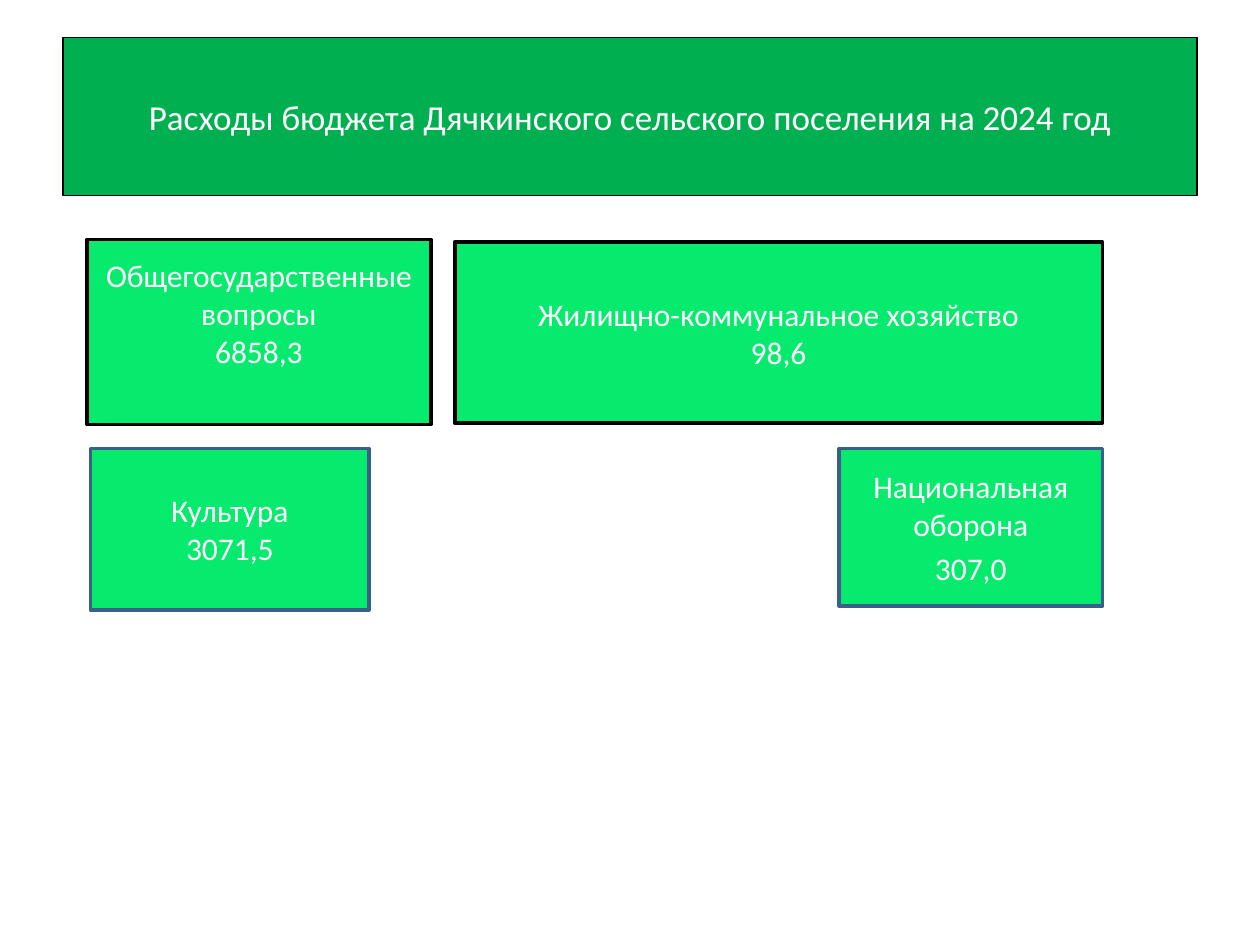
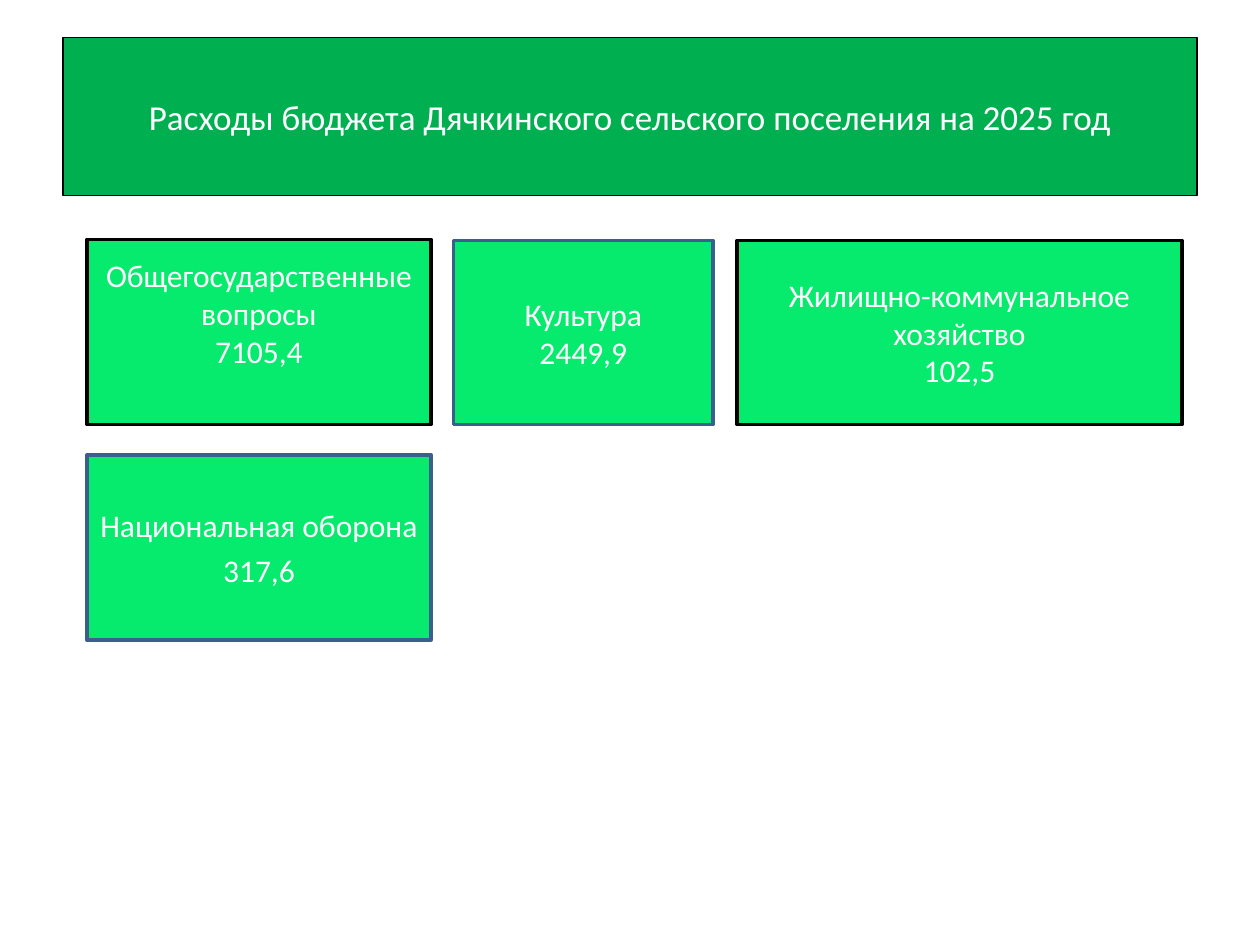
from pptx import Presentation
from pptx.dml.color import RGBColor
from pptx.enum.shapes import MSO_SHAPE
from pptx.enum.text import MSO_ANCHOR, MSO_AUTO_SIZE, PP_ALIGN
from pptx.util import Pt

RECT = MSO_SHAPE.RECTANGLE
MIDDLE = MSO_ANCHOR.MIDDLE
CENTER = PP_ALIGN.CENTER
NO_AUTOFIT = MSO_AUTO_SIZE.NONE

WHITE = RGBColor(0xFF, 0xFF, 0xFF)
BLACK = RGBColor(0x00, 0x00, 0x00)
BLUE = RGBColor(0x3A, 0x5F, 0x8C)
GREEN = RGBColor(0x00, 0xB0, 0x50)
LIGHT_GREEN = RGBColor(0x06, 0xEA, 0x6D)

FONT = "Calibri"
TITLE_BOX = (36, 21.6, 648, 90)
GENERAL_BOX = (49.7, 136.8, 196.6, 105.8)
RAISED_TEXT = 25.6  # bottom inset that lifts the text by half a line

GENERAL = "Общегосударственные вопросы"
HOUSING = "Жилищно-коммунальное хозяйство"
CULTURE = "Культура"
DEFENCE = "Национальная оборона"


class BudgetDeck:
    def __init__(self):
        self.prs = Presentation()
        self.prs.slide_width, self.prs.slide_height = Pt(720), Pt(540)
        self.slide = None

    def style(self, sp, box, lines, fill, line, width, size):
        """Place a shape and give it its colours and centred white text."""
        sp.left, sp.top, sp.width, sp.height = map(Pt, box)
        sp.fill.solid()
        sp.fill.fore_color.rgb = fill
        sp.line.color.rgb = line
        sp.line.width = Pt(width)
        tf = sp.text_frame
        tf.text = "\n".join(lines)
        tf.word_wrap = True
        tf.auto_size = NO_AUTOFIT
        tf.vertical_anchor = MIDDLE
        for p in tf.paragraphs:
            p.alignment = CENTER
            for r in p.runs:
                r.font.name = FONT
                r.font.size = Pt(size)
                r.font.color.rgb = WHITE

    def add_slide(self, year):
        self.slide = self.prs.slides.add_slide(self.prs.slide_layouts[1])
        title = f"Расходы бюджета Дячкинского сельского поселения на {year} год"
        self.style(self.slide.shapes.title, TITLE_BOX, [title],
                   GREEN, BLACK, 0.75, 20)

    def add_card(self, box, name, amount, line, bottom=3.6):
        sp = self.slide.shapes.add_shape(RECT, *map(Pt, box))
        sp.shadow.inherit = False
        self.style(sp, box, [name, amount], LIGHT_GREEN, line, 2, 18)
        sp.text_frame.margin_bottom = Pt(bottom)

    def add_body_card(self, box, name, amount):
        """Show a budget item in the body placeholder, without bullets."""
        sp = self.slide.placeholders[1]
        self.style(sp, box, [name, amount], LIGHT_GREEN, BLUE, 2, 18)
        for p in sp.text_frame.paragraphs:
            pPr = p._p.get_or_add_pPr()
            pPr.set("marL", "0")
            pPr.set("indent", "0")
            pPr.insert_element_before(
                pPr.makeelement(pPr.tag.replace("pPr", "buNone"), {}),
                "a:tabLst", "a:defRPr", "a:extLst")


def main():
    deck = BudgetDeck()

    deck.add_slide(2024)
    deck.add_card(GENERAL_BOX, GENERAL, "6858,3", BLACK, RAISED_TEXT)
    deck.add_card((259.9, 138.2, 370.1, 103.7), HOUSING, "98,6", BLACK)
    deck.add_card((51.8, 256.3, 159.1, 92.2), CULTURE, "3071,5", BLUE)
    deck.add_body_card((479.5, 256.3, 150.5, 90), DEFENCE, "307,0")

    deck.add_slide(2025)
    deck.add_card(GENERAL_BOX, GENERAL, "7105,4", BLACK, RAISED_TEXT)
    deck.add_card((259.2, 137.5, 148.3, 105.1), CULTURE, "2449,9", BLUE)
    deck.add_card((421.2, 137.5, 254.2, 105.1), HOUSING, "102,5", BLACK)
    deck.add_body_card((49.7, 259.9, 196.6, 105.8), DEFENCE, "317,6")

    deck.prs.save("out.pptx")


if __name__ == "__main__":
    main()
